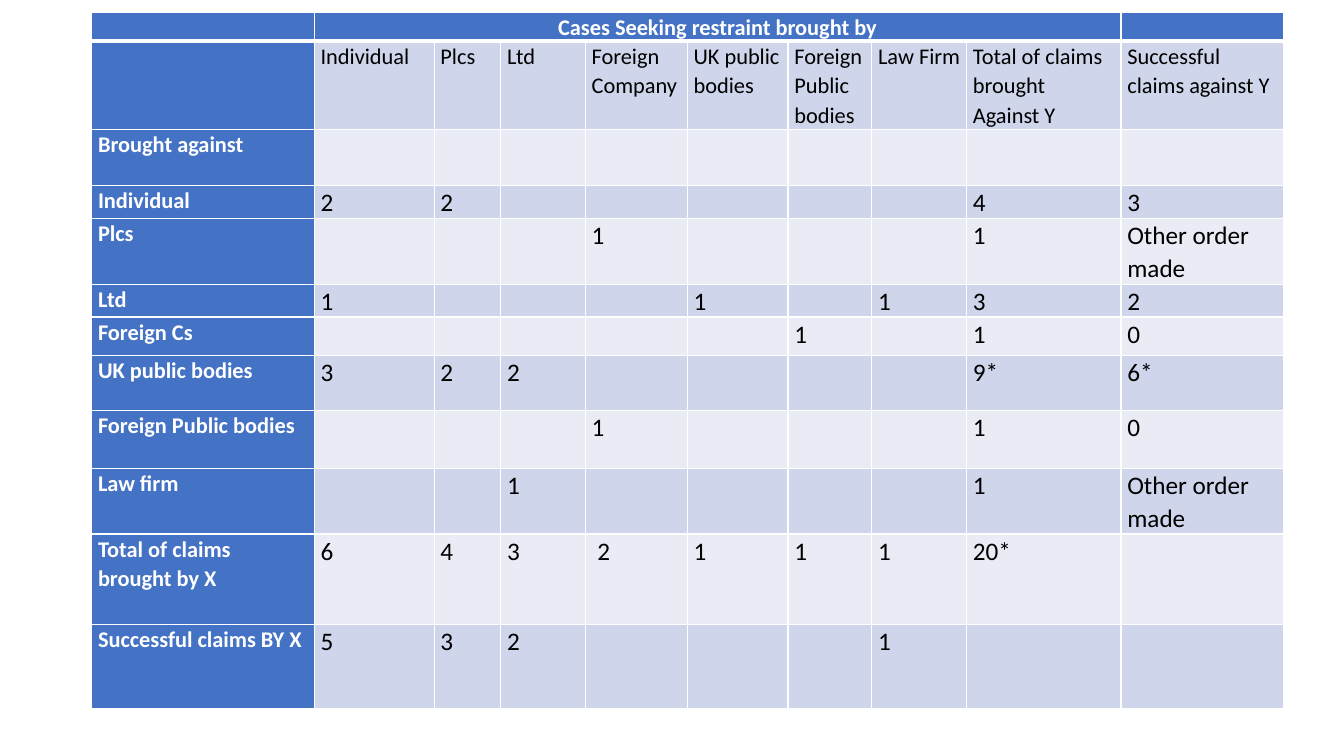
"""Build a one-slide table of restraint cases by claimant and defendant."""
from dataclasses import dataclass

from lxml.etree import SubElement
from pptx import Presentation
from pptx.dml.color import RGBColor as Color
from pptx.enum.text import MSO_ANCHOR as Anchor, PP_ALIGN as Align
from pptx.oxml import parse_xml
from pptx.oxml.ns import nsdecls, qn
from pptx.util import Cm, Pt


@dataclass(frozen=True)
class Theme:
    """Colours, type sizes and spacing of the slide."""
    header: str = "4472C4"
    bands: tuple = ("E9EBF5", "CFD5EA")
    light: str = "FFFFFF"
    dark: str = "000000"
    font: str = "Calibri"
    label_size: int = 16
    value_size: int = 18
    line_spacing: float = 1.07
    rule: int = 1
    heavy_rule: int = 3


THEME = Theme()
TABLE_BOX = (2.31, 0.3)
COLUMN_WIDTHS = (5.61, 3.02, 1.68, 2.13, 2.57, 2.54, 2.11, 2.39, 3.89, 4.11)
ROW_HEIGHTS = (0.73, 2.22, 1.41, 0.83, 1.66, 0.83, 0.96, 1.39, 1.46, 1.66, 2.27, 2.12)
SPANNING_TITLE = "Cases Seeking restraint brought by"
CLAIMANTS = ("", "Individual", "Plcs", "Ltd", "Foreign Company", "UK public bodies",
             "Foreign Public bodies", "Law Firm", "Total of claims brought\nAgainst Y",
             "Successful claims against Y")
CASES = (
    ("Brought against", "", "", "", "", "", "", "", "", ""),
    ("Individual", "2", "2", "", "", "", "", "", "4", "3"),
    ("Plcs", "", "", "", "1", "", "", "", "1", "Other order made"),
    ("Ltd", "1", "", "", "", "1", "", "1", "3", "2"),
    ("Foreign Cs", "", "", "", "", "", "1", "", "1", "0"),
    ("UK public bodies", "3", "2", "2", "", "", "", "", "9*", "6*"),
    ("Foreign Public bodies", "", "", "", "1", "", "", "", "1", "0"),
    ("Law firm", "", "", "1", "", "", "", "", "1", "Other order made"),
    ("Total of claims brought by X", "6", "4", "3", " 2", "1", "1", "1", "20*", ""),
    ("Successful claims BY X", "5", "3", "2", "", "", "", "1", "", ""),
)


def set_borders(cell, bottom):
    """Draw white rules round a cell, with the given bottom width in points."""
    properties = cell._tc.get_or_add_tcPr()
    widths = {"lnL": THEME.rule, "lnR": THEME.rule, "lnT": THEME.rule, "lnB": bottom}
    for position, (side, width) in enumerate(widths.items()):
        properties.insert(position, parse_xml(
            f'<a:{side} {nsdecls("a")} w="{Pt(width)}"><a:solidFill>'
            f'<a:srgbClr val="{THEME.light}"/></a:solidFill></a:{side}>'))


def write_cell(cell, text, size, is_header, align):
    """Put formatted text into a cell."""
    cell.text_frame.text = text
    look = {"name": THEME.font, "size": Pt(size), "bold": is_header}
    for para in cell.text_frame.paragraphs:
        para.line_spacing = THEME.line_spacing
        para.alignment = align
        for span in para.runs:
            for name, value in look.items():
                setattr(span.font, name, value)
            span.font.color.rgb = Color.from_string(THEME.light if is_header else THEME.dark)
        if not para.runs:
            SubElement(para._p, qn("a:endParaRPr"), sz=str(size * 100))


def style_cell(cell, fill, bottom):
    """Set the margins, fill and rules of a cell."""
    layout = {"margin_left": Cm(0.16), "margin_right": Cm(0.16), "margin_top": 0,
              "margin_bottom": 0, "vertical_anchor": Anchor.TOP}
    for name, value in layout.items():
        setattr(cell, name, value)
    cell.fill.solid()
    cell.fill.fore_color.rgb = Color.from_string(fill)
    set_borders(cell, bottom)


def add_case_table(page, box):
    """Add the table of cases at the left and top of the box."""
    title_row = ("", SPANNING_TITLE) + ("",) * (len(CLAIMANTS) - 2)
    rows = (title_row, CLAIMANTS) + CASES
    left, top = box
    table = page.shapes.add_table(
        len(rows), len(CLAIMANTS), Cm(left), Cm(top),
        Cm(sum(COLUMN_WIDTHS)), Cm(sum(ROW_HEIGHTS))).table
    table.horz_banding = False
    for column, width in zip(table.columns, COLUMN_WIDTHS):
        column.width = Cm(width)
    for row, height in zip(table.rows, ROW_HEIGHTS):
        row.height = Cm(height)
    for row_index, values in enumerate(rows):
        for column_index, text in enumerate(values):
            cell = table.cell(row_index, column_index)
            is_title = row_index == 0
            is_header = is_title or column_index == 0
            is_label = is_header or row_index == 1
            style_cell(cell, THEME.header if is_header else THEME.bands[row_index % 2],
                       THEME.heavy_rule if is_title else THEME.rule)
            write_cell(cell, text, THEME.label_size if is_label else THEME.value_size,
                       is_header, Align.CENTER if is_title else Align.LEFT)
    table.cell(0, 1).merge(table.cell(0, len(CLAIMANTS) - 2))


def main():
    """Create the deck and save it."""
    deck = Presentation()
    deck.slide_width, deck.slide_height = Cm(33.87), Cm(19.05)
    page = deck.slides.add_slide(deck.slide_layouts[6])
    add_case_table(page, TABLE_BOX)
    deck.save("out.pptx")


if __name__ == "__main__":
    main()
